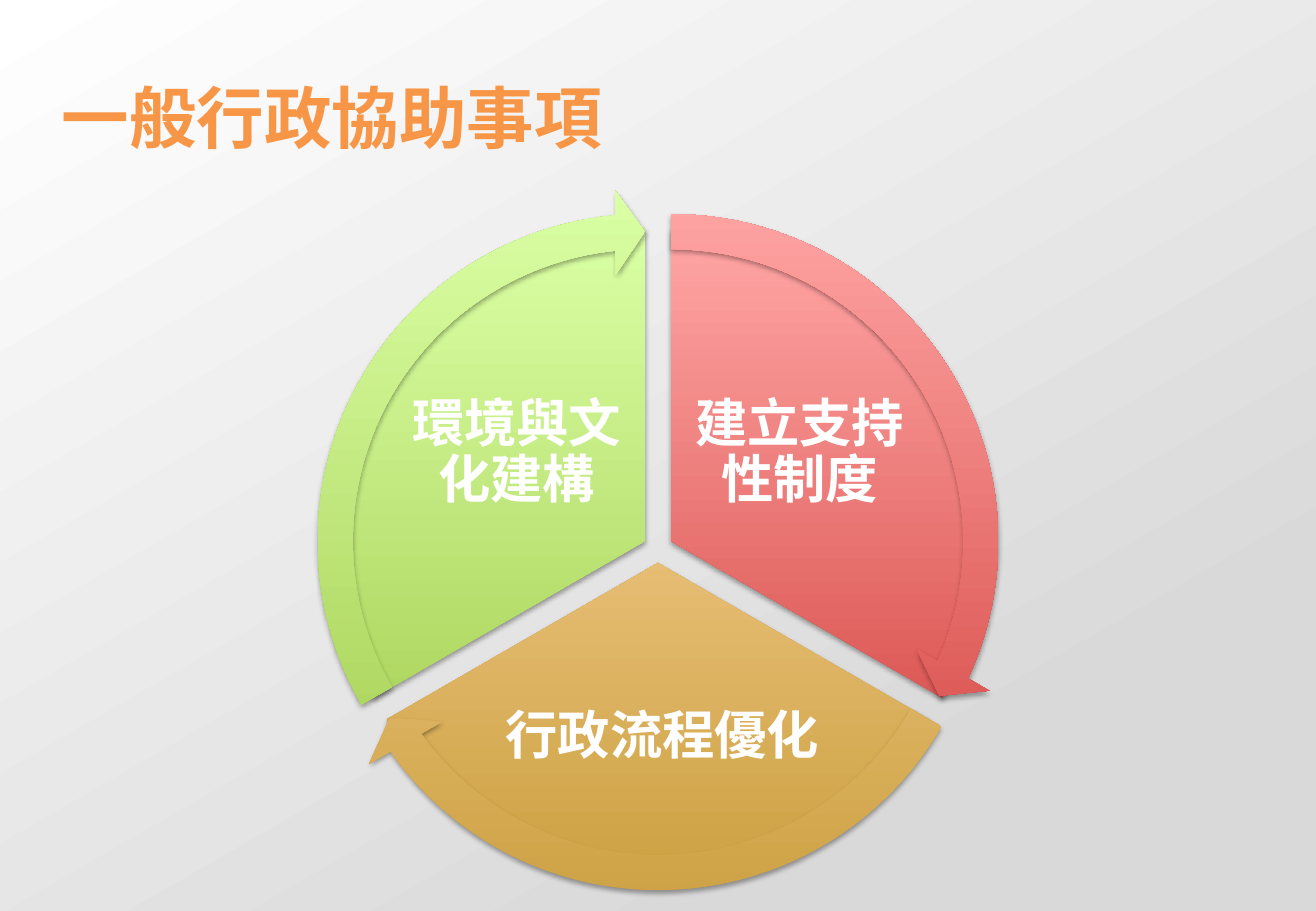
from dataclasses import dataclass

from lxml.etree import SubElement
from pptx import Presentation
from pptx.dml.color import RGBColor
from pptx.dml.fill import FillFormat
from pptx.enum.shapes import MSO_SHAPE
from pptx.enum.text import MSO_ANCHOR, MSO_AUTO_SIZE, PP_ALIGN
from pptx.oxml.ns import qn
from pptx.slide import Slide
from pptx.text.text import TextFrame
from pptx.util import Inches, Pt

WIDE, HIGH = Inches(10.83), Inches(7.5)
FONT = "Noto Sans CJK SC"
COLORS = {
    "title": "F79646", "label": "FFFFFF", "shade": "000000",
    "white": "FFFFFF", "gray": "D9D9D9",
    "red": "D1403C", "pink": "FFA6A5",
    "gold": "CDA143", "sand": "FFDAA5",
    "green": "A0CA4A", "lime": "DAFFA5",
}
# Diameters, as percent of the slide height
PIE, RING = 68.67, 77.2


@dataclass
class Box:
    """Left, top, width and height in percent of the slide."""
    left: float
    top: float
    wide: float
    high: float


@dataclass
class Part:
    """One third of the cycle; its center is in percent of the slide."""
    text: str
    x: float
    y: float
    dark: str
    light: str
    slice: tuple[float, float]
    arrow: tuple[float, float]
    box: Box


PARTS = [
    Part("建立支持性制度", 51, 59.4, "red", "pink", (162, 18),
         (14.72, 161.99), Box(52.26, 39.6, 17, 20.4)),
    Part("行政流程優化", 50, 61.8, "gold", "sand", (18, 90),
         (86.72, 18), Box(37.58, 72, 25.48, 18)),
    Part("環境與文化建構", 49, 59.4, "green", "lime", (90, 162),
         (158.73, 90), Box(30.75, 39.6, 17, 20.4)),
]


def color(name: str) -> RGBColor:
    return RGBColor.from_string(COLORS[name])


def blend(fill: FillFormat, start: str, end: str, angle: float, stop: float = 1) -> None:
    fill.gradient()
    fill.gradient_angle = angle
    first, last = fill.gradient_stops
    first.color.rgb, last.color.rgb = color(start), color(end)
    first.position, last.position = 0, stop


def write(slide: Slide, text: str, box: Box, size: float, tint: str, inset: float) -> TextFrame:
    shape = slide.shapes.add_textbox(
        int(WIDE * box.left / 100), int(HIGH * box.top / 100),
        int(WIDE * box.wide / 100), int(HIGH * box.high / 100))
    frame = shape.text_frame
    frame.word_wrap = True
    frame.margin_left = frame.margin_right = Inches(inset)
    frame.margin_top = frame.margin_bottom = Inches(inset)
    line = frame.paragraphs[0]
    line.text = text
    font = line.font
    font.name, font.size, font.bold = FONT, Pt(size), True
    font.color.rgb = color(tint)
    # East Asian typeface
    props = line._p.pPr.find(qn("a:defRPr"))
    SubElement(props, qn("a:ea"), typeface=FONT)
    return frame


def draw(slide: Slide, part: Part, kind: MSO_SHAPE, size: float, turns: tuple[float, ...]) -> None:
    side = int(HIGH * size / 100)
    shape = slide.shapes.add_shape(
        kind, int(WIDE * part.x / 100 - side / 2),
        int(HIGH * part.y / 100 - side / 2), side, side)
    for i, turn in enumerate(turns):
        shape.adjustments[i] = turn
    blend(shape.fill, part.dark, part.light, 90)
    shape.line.fill.background()
    # Soft shadow straight below
    shape.shadow.inherit = False
    effects = shape._element.spPr.find(qn("a:effectLst"))
    shade = SubElement(effects, qn("a:outerShdw"), blurRad=str(Pt(3.1)),
                       dist=str(Pt(1.8)), dir="5400000", rotWithShape="0")
    tint = SubElement(shade, qn("a:srgbClr"), val=COLORS["shade"])
    SubElement(tint, qn("a:alpha"), val="35000")


def label(slide: Slide, part: Part) -> None:
    frame = write(slide, part.text, part.box, 31, "label", 0.04)
    frame.vertical_anchor = MSO_ANCHOR.MIDDLE
    line = frame.paragraphs[0]
    line.alignment = PP_ALIGN.CENTER
    line.line_spacing = 0.9
    line.space_after = Pt(10.85)


def main() -> None:
    deck = Presentation()
    deck.slide_width, deck.slide_height = WIDE, HIGH
    slide = deck.slides.add_slide(deck.slide_layouts[6])
    blend(slide.background.fill, "white", "gray", 300, 0.8)

    # Title
    title = write(slide, "一般行政協助事項", Box(4.71, 8.4, 95.2, 8.93), 40, "title", 0)
    title.auto_size = MSO_AUTO_SIZE.SHAPE_TO_FIT_TEXT

    # Slices with their labels
    for part in PARTS:
        draw(slide, part, MSO_SHAPE.PIE, PIE, part.slice)
        label(slide, part)

    # Arrows around the rim
    for part in PARTS:
        draw(slide, part, MSO_SHAPE.CIRCULAR_ARROW, RING,
             (0.05, 3.28, *part.arrow, 0.06))

    deck.save("out.pptx")


if __name__ == "__main__":
    main()
